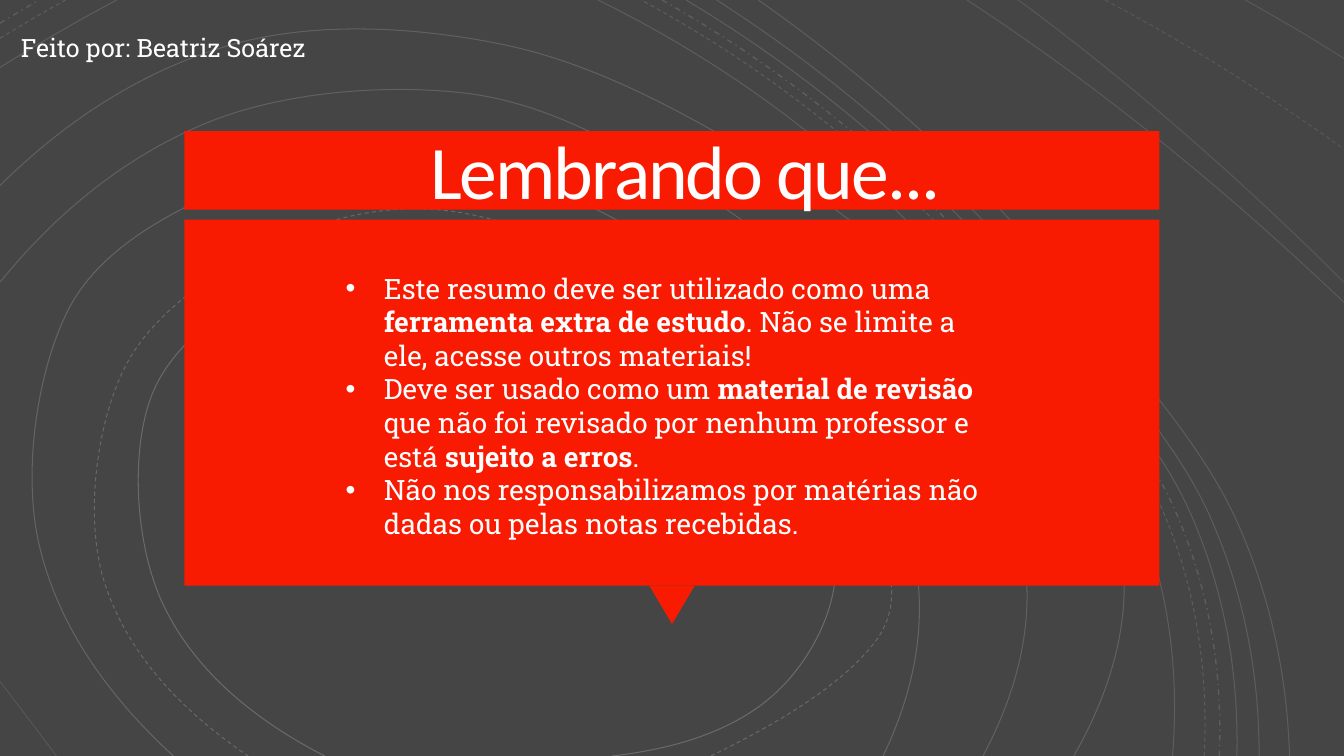
from lxml import etree
from pptx import Presentation
from pptx.dml.color import RGBColor
from pptx.enum.dml import MSO_LINE_DASH_STYLE as Dash
from pptx.enum.shapes import MSO_SHAPE as Shape
from pptx.enum.text import MSO_ANCHOR as Anchor, MSO_AUTO_SIZE as AutoSize, PP_ALIGN as Align
from pptx.oxml.ns import qn
from pptx.util import Inches, Pt

GRAY = RGBColor(0x45, 0x45, 0x45)
RED = RGBColor(0xF8, 0x1B, 0x02)
WHITE = RGBColor(0xFF, 0xFF, 0xFF)
OFF_WHITE = RGBColor(0xFF, 0xFE, 0xFF)
BODY_FONT = "Roboto Slab"
WIDTH, HEIGHT = 13.33, 7.5

# Rings around the panel: opacity in percent, dash, points passed through
RINGS = [
    (17, Dash.SOLID, [(8.76, 7.5), (8.99, 5.21), (7.38, 3.15), (5.88, 2.06), (4.12, 1.53),
                      (2.21, 1.88), (0.68, 3.07), (0.39, 5.41), (1.72, 7.5)]),
    (20, Dash.SOLID, [(6.07, 7.5), (7.75, 6.82), (8.25, 5.29), (6.84, 3.51), (4.8, 2.48),
                      (2.94, 2.68), (1.51, 3.91), (1.62, 6), (3.22, 7.5)]),
    (18, Dash.DASH, [(7.05, 7.5), (8.67, 6.38), (8.74, 5.33), (8.17, 4.4), (6.51, 2.9),
                     (4.43, 2.09), (2.63, 2.45), (1.22, 3.68), (1.04, 5.79), (2.46, 7.5)]),
    (15, Dash.SOLID, [(9.75, 7.5), (10.07, 5.14), (8.38, 3.06), (6.63, 1.72), (4.58, 0.92),
                      (2.05, 1.22), (0, 2.8)]),
    (14, Dash.SOLID, [(10.65, 7.5), (11.06, 5.14), (9.44, 3.07), (7.37, 1.47), (4.98, 0.44),
                      (2.31, 0.44), (0, 1.84)]),
]

# Strands on the right fan out from the inner one to the outer one
INNER_STRAND = [(11.63, 7.5), (11.24, 4.98), (9.63, 2.87), (7.92, 1.24), (5.93, 0)]
OUTER_STRAND = [(12.79, 7.5), (12.28, 5.2), (10.9, 3.22), (9.33, 1.48), (7.52, 0)]
STRANDS = [(0, Dash.SOLID, 0.75), (0.27, Dash.DASH, 0.75), (0.4, Dash.DASH_DOT, 1),
           (0.55, Dash.SOLID, 0.75), (0.74, Dash.SOLID, 0.75), (1, Dash.SOLID, 0.75)]

# Short arcs across the corners: opacity, dash, line width, two ends
CORNER_ARCS = [
    (15, Dash.SOLID, 0.38, (0, 6.76), (0.56, HEIGHT)),
    (13, Dash.SOLID, 0.75, (0, 0.67), (1.16, 0)),
    (12, Dash.DASH, 0.75, (0, 0.38), (0.65, 0)),
    (12, Dash.DASH_DOT, 1, (0, 0.23), (0.39, 0)),
    (11, Dash.SOLID, 0.75, (9.59, 0), (WIDTH, 3)),
    (10, Dash.SOLID, 0.75, (10.1, 0), (WIDTH, 2.8)),
    (10, Dash.DASH, 0.75, (10.96, 0), (WIDTH, 1.48)),
    (10, Dash.SOLID, 0.75, (12.35, 0), (WIDTH, 0.58)),
]

# Each reminder alternates plain and bold text
REMINDERS = [
    ["Este resumo deve ser utilizado como uma ", "ferramenta extra de estudo",
     ". Não se limite a ele, acesse outros materiais!"],
    ["Deve ser usado como um ", "material de revisão",
     " que não foi revisado por nenhum professor e está ", "sujeito a erros", "."],
    ["Não nos responsabilizamos por matérias não dadas ou pelas notas recebidas."],
]

prs = Presentation()
prs.slide_width, prs.slide_height = Inches(WIDTH), Inches(HEIGHT)
slide = prs.slides.add_slide(prs.slide_layouts[5])
shapes = slide.shapes
slide.background.fill.solid()
slide.background.fill.fore_color.rgb = GRAY


def extend(a, b, c):
    """Return the point before a on the parabola through a, b and c."""
    return tuple(3 * p - 3 * q + r for p, q, r in zip(a, b, c))


def draw_contour(points, opacity, dash, width):
    """Draw a smooth Bezier line (Catmull-Rom) through the points."""
    track = [extend(*points[:3]), *points, extend(*points[:-4:-1])]
    controls = []
    for before, start, end, after in zip(track, track[1:], track[2:], track[3:]):
        controls.append([s + (e - b) / 6 for b, s, e in zip(before, start, end)])
        controls.append([e - (a - s) / 6 for s, e, a in zip(start, end, after)])
        controls.append(end)
    builder = shapes.build_freeform(Inches(points[0][0]), Inches(points[0][1]))
    builder.add_line_segments([(Inches(x), Inches(y)) for x, y in controls], close=False)
    contour = builder.convert_to_shape()
    contour.shadow.inherit = False
    contour.fill.background()
    contour.line.width = Pt(width)
    contour.line.color.rgb = WHITE
    contour.line.dash_style = dash
    color = contour.line._ln.find(".//" + qn("a:srgbClr"))
    etree.SubElement(color, qn("a:alpha"), val=str(opacity * 1000))
    # Every three straight segments become one cubic Bezier
    segments = list(contour._element.iter(qn("a:lnTo")))
    for i in range(0, len(segments), 3):
        curve = etree.Element(qn("a:cubicBezTo"))
        segments[i].addprevious(curve)
        for segment in segments[i:i + 3]:
            curve.append(segment[0])
            segment.getparent().remove(segment)


for opacity, dash, points in RINGS:
    draw_contour(points, opacity, dash, 0.75)

for share, dash, width in STRANDS:
    strand = [(x + share * (u - x), y + share * (v - y))
              for (x, y), (u, v) in zip(INNER_STRAND, OUTER_STRAND)]
    draw_contour(strand, 12, dash, width)

for opacity, dash, width, start, end in CORNER_ARCS:
    bow = 0.01 * (end[0] - start[0]) ** 2
    middle = ((start[0] + end[0]) / 2, (start[1] + end[1]) / 2 - bow)
    draw_contour([start, middle, end], opacity, dash, width)

# Red banner, pointer and panel
for kind, left, top, width, height, rotation in [
    (Shape.RECTANGLE, 1.83, 1.3, 9.67, 0.78, 0),
    (Shape.ISOSCELES_TRIANGLE, 6.44, 5.81, 0.45, 0.38, 180),
    (Shape.RECTANGLE, 1.83, 2.18, 9.67, 3.63, 0),
]:
    block = shapes.add_shape(kind, Inches(left), Inches(top), Inches(width), Inches(height))
    block.rotation = rotation
    block.shadow.inherit = False
    block.fill.solid()
    block.fill.fore_color.rgb = RED
    block.line.fill.background()

# Title, brought in front of the banner
title = shapes.title
shapes._spTree.append(title._element)
title.left, title.top = Inches(2.05), Inches(0.21)
title.width, title.height = Inches(9.49), Inches(1.91)
title_frame = title.text_frame
title_frame.text = "Lembrando que..."
title_frame.word_wrap = True
title_frame.auto_size = AutoSize.NONE
title_frame.vertical_anchor = Anchor.BOTTOM
title_frame.margin_left = title_frame.margin_right = title_frame.margin_top = Inches(0.25)
title_frame.margin_bottom = 0
heading = title_frame.paragraphs[0]
heading.alignment = Align.CENTER
heading.line_spacing = 0.8
heading.space_after = Pt(6)
heading.font.name, heading.font.size = "Calibri", Pt(54)
heading.font.color.rgb = OFF_WHITE
heading.runs[0].font._element.set("spc", "-150")

# Bulleted reminders
reminders = shapes.add_textbox(Inches(3.33), Inches(2.64), Inches(6.67), Inches(2.79)).text_frame
reminders.word_wrap = True
reminders.auto_size = AutoSize.SHAPE_TO_FIT_TEXT
for i, reminder in enumerate(REMINDERS):
    item = reminders.add_paragraph() if i else reminders.paragraphs[0]
    item.font.name, item.font.size = BODY_FONT, Pt(20)
    item.font.color.rgb = WHITE
    for position, text in enumerate(reminder):
        run = item.add_run()
        run.text = text
        run.font.bold = position % 2 == 1
    properties = item._p.get_or_add_pPr()
    properties.set("marL", str(Inches(0.38)))
    properties.set("indent", str(-Inches(0.38)))
    bullet_font = etree.Element(qn("a:buFont"), typeface="Arial")
    properties.insert(0, bullet_font)
    bullet_font.addnext(etree.Element(qn("a:buChar"), char="•"))

# Author credit
credit_frame = shapes.add_textbox(Inches(0.11), Inches(0.02), Inches(3.26), Inches(0.84)).text_frame
credit_frame.word_wrap = True
credit_frame.vertical_anchor = Anchor.MIDDLE
credit = credit_frame.paragraphs[0]
credit.text = "Feito por: Beatriz Soárez"
credit.line_spacing = 1.2
credit.space_before = Pt(10)
credit.font.name, credit.font.size = BODY_FONT, Pt(18)
credit.font.color.rgb = WHITE

prs.save("out.pptx")
